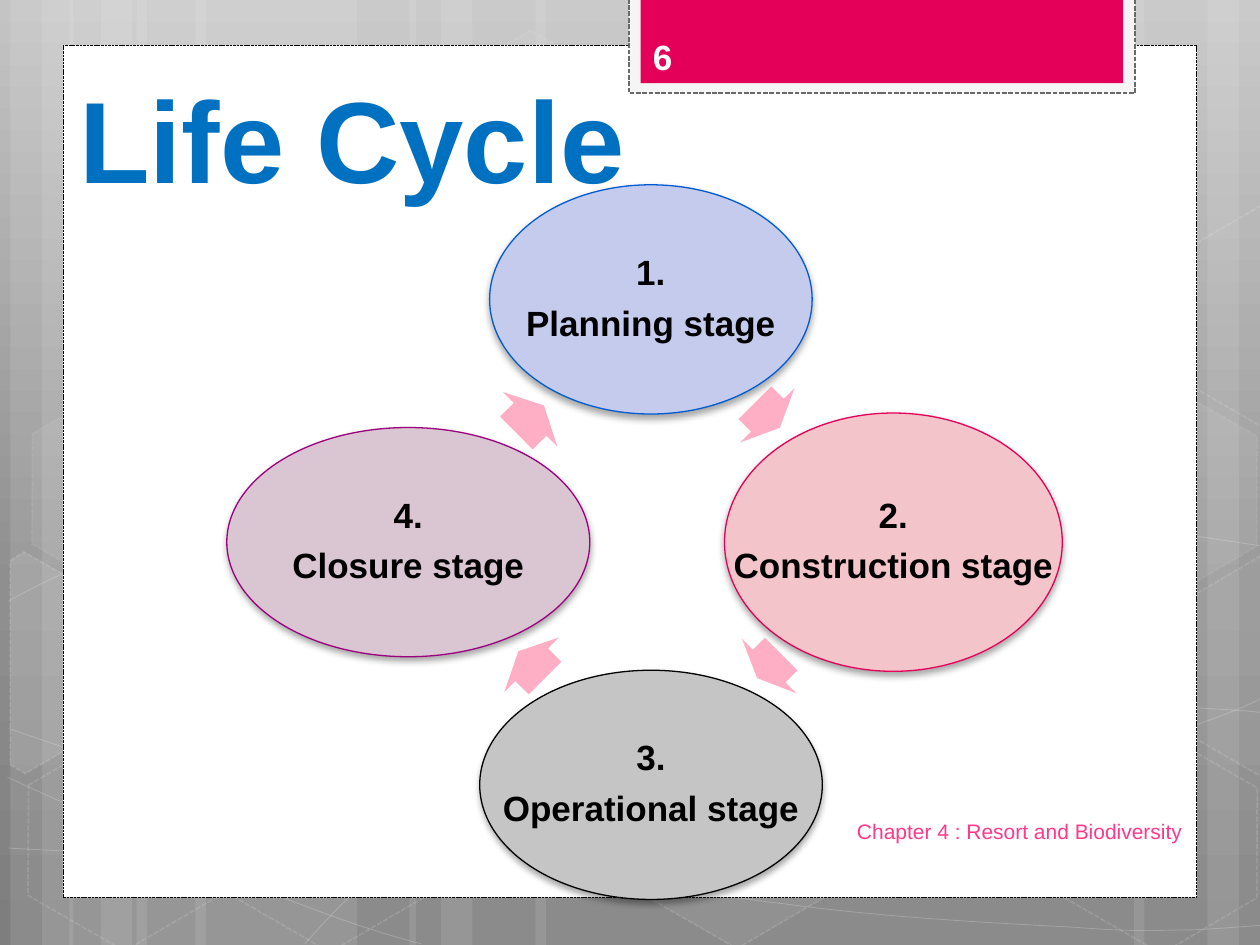
from copy import deepcopy
from pptx import Presentation
from pptx.dml.color import RGBColor
from pptx.enum import dml, shapes, text
from pptx.oxml import parse_xml
from pptx.oxml.ns import nsdecls
from pptx.util import Pt

rgb = RGBColor.from_string
MSO = shapes.MSO_SHAPE
AL = text.PP_ALIGN


def paint(sp, fill=None, line=None, width=0.75, dash=False, fill_a=100, line_a=100):
    """Set fill and line, with opacities in percent; None means no paint."""
    sp.shadow.inherit = False
    if fill:
        sp.fill.solid()
        sp.fill.fore_color.rgb = rgb(fill)
    else:
        sp.fill.background()
    if line:
        sp.line.color.rgb = rgb(line)
        sp.line.width = Pt(width)
        if dash:
            sp.line.dash_style = dml.MSO_LINE.SQUARE_DOT
    else:
        sp.line.fill.background()
    for where, alpha in (("./", fill_a), ("./a:ln/", line_a)):
        for clr in sp.element.spPr.xpath(where + "a:solidFill/a:srgbClr"):
            if alpha < 100:
                clr.append(parse_xml(f'<a:alpha {nsdecls("a")} val="{alpha * 1000}"/>'))


def write(sp, words, size, color, bold, align, anchor=text.MSO_ANCHOR.MIDDLE, wrap=True):
    tf = sp.text_frame
    tf.text = words
    tf.word_wrap = wrap
    tf.vertical_anchor = anchor
    for p in tf.paragraphs:
        p.alignment = align
        for r in p.runs:
            r.font.name = "Arial"
            r.font.size = Pt(size)
            r.font.bold = bold
            r.font.color.rgb = rgb(color)
    return tf


prs = Presentation()
prs.slide_width, prs.slide_height = Pt(720), Pt(540)
s = prs.slides.add_slide(prs.slide_layouts[6])

# Background: three-stop vertical gradient
bg = s.background.fill
bg.gradient()
bg.gradient_angle = 270
gs_list = s.element.xpath(".//a:gsLst")[0]
gs_list.insert(1, deepcopy(gs_list[0]))
for stop, pos, color in zip(bg.gradient_stops, (0, 0.62, 1), ("C4C4C4", "8F8F8F", "7E7E7E")):
    stop.position = pos
    stop.color.rgb = rgb(color)

# Translucent stripes: left, width
for x, w in ((78, 126), (6, 36), (24, 60), (111.6, 126), (39.6, 36), (57.6, 60),
             (528, 126), (690, 36), (648, 60), (306, 222), (234, 36), (252, 60)):
    sp = s.shapes.add_shape(MSO.RECTANGLE, Pt(x), Pt(0), Pt(w), Pt(540))
    paint(sp, "FFFFFF", fill_a=10)

# Thin waves: start point, then two controls and an end point per cubic segment
waves = [
    [(5, 484.6), (43.9, 486.7), (82.8, 488.9), (136.8, 488.2), (190.8, 487.4), (257.8, 486),
     (329.8, 478.8), (401.8, 471.6), (504, 457.2), (570.2, 444.2), (635.8, 431.3),
     (703.4, 409.7), (725, 396.7)],
    [(5, 343.4), (25.9, 331.9), (46.8, 321.1), (87.1, 310.3), (128.2, 299.5), (186.5, 283.7),
     (249.8, 278.6), (313.9, 273.6), (391.7, 272.9), (470.9, 278.6), (550.1, 284.4),
     (681.8, 306.7), (725, 312.5)],
    [(4.3, 444.2), (91.4, 483.8), (177.8, 523.4), (240.5, 539.3)],
    [(5, 416.2), (27.4, 424.1), (50.4, 432), (92.2, 443.5), (133.9, 454.3), (196.6, 472.3),
     (257, 484.6), (316.8, 496.8), (392.4, 509.8), (452.2, 517), (511.9, 524.9), (576, 527.8),
     (614.2, 529.9), (651.6, 532.8), (661.7, 531.4), (680.4, 531.4), (699.1, 530.6),
     (712.1, 529.2), (725, 528.5)],
    [(174.2, 539.3), (187.2, 524.9), (200.2, 510.5), (217.4, 497.5), (234.7, 484.6),
     (259.2, 470.2), (279.4, 460.1), (299.5, 450), (311.8, 445.7), (338.4, 438.5),
     (364.3, 431.3), (412.6, 421.2), (437.8, 416.2), (463.7, 411.1), (467.3, 411.1),
     (489.6, 409.7), (511.9, 407.5), (547.2, 405.4), (571.7, 404.6), (596.9, 403.9),
     (637.9, 404.6), (637.9, 404.6), (637.9, 404.6), (686.2, 404.6), (686.2, 404.6),
     (699.1, 405.4), (711.4, 406.1), (717.8, 406.8), (724.3, 407.5), (722.2, 406.8),
     (724.3, 407.5)],
]
for wave in waves:
    first, *rest = [(Pt(x), Pt(y)) for x, y in wave]
    fb = s.shapes.build_freeform(*first)
    fb.add_line_segments(rest, close=False)
    sp = fb.convert_to_shape()
    # Join every three line points into one cubic curve
    lines = sp.element.xpath(".//a:lnTo")
    for i in range(0, len(lines), 3):
        curve = parse_xml(f'<a:cubicBezTo {nsdecls("a")}/>')
        lines[i].addprevious(curve)
        for ln in lines[i:i + 3]:
            curve.append(ln[0])
            ln.getparent().remove(ln)
    paint(sp, line="FFFFFF", width=0.5, line_a=20)

# Hexagons: left, top, fill opacity, line opacity
for x, y, fill_a, line_a in ((240.5, 25.9, 4, 8), (357.8, 424.1, 6, 12), (7.9, 425.5, 0, 12),
                             (10.1, 224.6, 7, 8), (125.3, 426.2, 0, 12), (542.2, 326.2, 10, 12),
                             (600.5, 427, 0, 12), (600.5, 226.1, 7, 8)):
    sp = s.shapes.add_shape(MSO.HEXAGON, Pt(x), Pt(y), Pt(126), Pt(109.4))
    sp.adjustments[0], sp.adjustments[1] = 0.285, 1.155
    sp.rotation = 30
    paint(sp, "FFFFFF" if fill_a else None, "FFFFFF", 1, True, fill_a, line_a)

# Hexagons cut off by the slide edges
for fill_a, pts in (
        (10, [(5.8, 320.4), (13.7, 315.4), (69.1, 347), (68.4, 410.4), (14.4, 442.1), (5.8, 437)]),
        (4, [(666.7, 349.2), (720.7, 317.5), (726.5, 321.1), (726.5, 441.4), (721.4, 444.2),
             (666.7, 412.6)]),
        (0, [(666.7, 149), (720.7, 117.4), (727.2, 121), (726.5, 241.2), (721.4, 244.1),
             (666.7, 212.4)])):
    first, *rest = [(Pt(x), Pt(y)) for x, y in pts]
    fb = s.shapes.build_freeform(*first)
    fb.add_line_segments(rest)
    paint(fb.convert_to_shape(), "FFFFFF" if fill_a else None, "FFFFFF", 1, True, fill_a, 12)

# White panel and page-number tab
for x, y, w, h, fill, line, width in ((36, 25.9, 648, 487, "FFFFFF", "000000", 0.5),
                                      (359.3, -1.4, 289.4, 54.7, "F5F5F5", "696969", 0.9),
                                      (366.1, -1.4, 275.8, 48.9, "E40059", None, 0)):
    sp = s.shapes.add_shape(MSO.RECTANGLE, Pt(x), Pt(y), Pt(w), Pt(h))
    paint(sp, fill, line, width, dash=True)

# Title
sp = s.shapes.add_textbox(Pt(36.7), Pt(31.7), Pt(329), Pt(90))
write(sp, "Life Cycle", 66, "0070C0", True, AL.CENTER, text.MSO_ANCHOR.BOTTOM)

# Cycle: stage ellipses, each followed by its arrow
stages = (
    ("1.\nPlanning stage", (279.8, 105.6, 184.3, 131), "C5CBED", "005BD3", (428.4, 215.3, 20.2)),
    ("2.\nConstruction stage", (414, 236, 193, 147.6), "F3C5CB", "E40059", (429.8, 358.6, 19.4)),
    ("3.\nOperational stage", (274.1, 383, 195.8, 131), "C5C5C5", "000000", (293, 357.8, 21.6)),
    ("4.\nClosure stage", (129.6, 244.3, 207.4, 131), "DAC5D2", "9C007F", (291.8, 217.6, 22.3)),
)
for i, (words, box, fill, line, (x, y, w)) in enumerate(stages):
    sp = s.shapes.add_shape(MSO.OVAL, *[Pt(v) for v in box])
    paint(sp, fill, line)
    sp.element.spPr.xpath("./a:effectLst")[0].append(parse_xml(
        f'<a:outerShdw {nsdecls("a")} blurRad="{Pt(4)}" dist="{Pt(2)}" dir="5400000" '
        'rotWithShape="0"><a:srgbClr val="000000"><a:alpha val="35000"/></a:srgbClr>'
        '</a:outerShdw>'))
    tf = write(sp, words, 20, "000000", True, AL.CENTER, wrap=False)
    tf.margin_left = tf.margin_right = tf.margin_top = tf.margin_bottom = Pt(2)
    for p in tf.paragraphs:
        p.line_spacing = 0.9
        p.space_after = Pt(7.4)

    sp = s.shapes.add_shape(MSO.RIGHT_ARROW, Pt(x), Pt(y), Pt(w), Pt(44))
    sp.adjustments[0], sp.adjustments[1] = 0.6, 0.5
    sp.rotation = 45 + 90 * i
    paint(sp, "FFAFC5")

# Footer and page number
sp = s.shapes.add_textbox(Pt(428), Pt(460.8), Pt(254.9), Pt(28.8))
write(sp, "Chapter 4 : Resort and Biodiversity", 12, "FF388C", False, AL.RIGHT)
sp = s.shapes.add_textbox(Pt(366), Pt(18), Pt(105), Pt(28.8))
write(sp, "6", 20, "FEFEFE", True, AL.LEFT)

prs.save("out.pptx")
